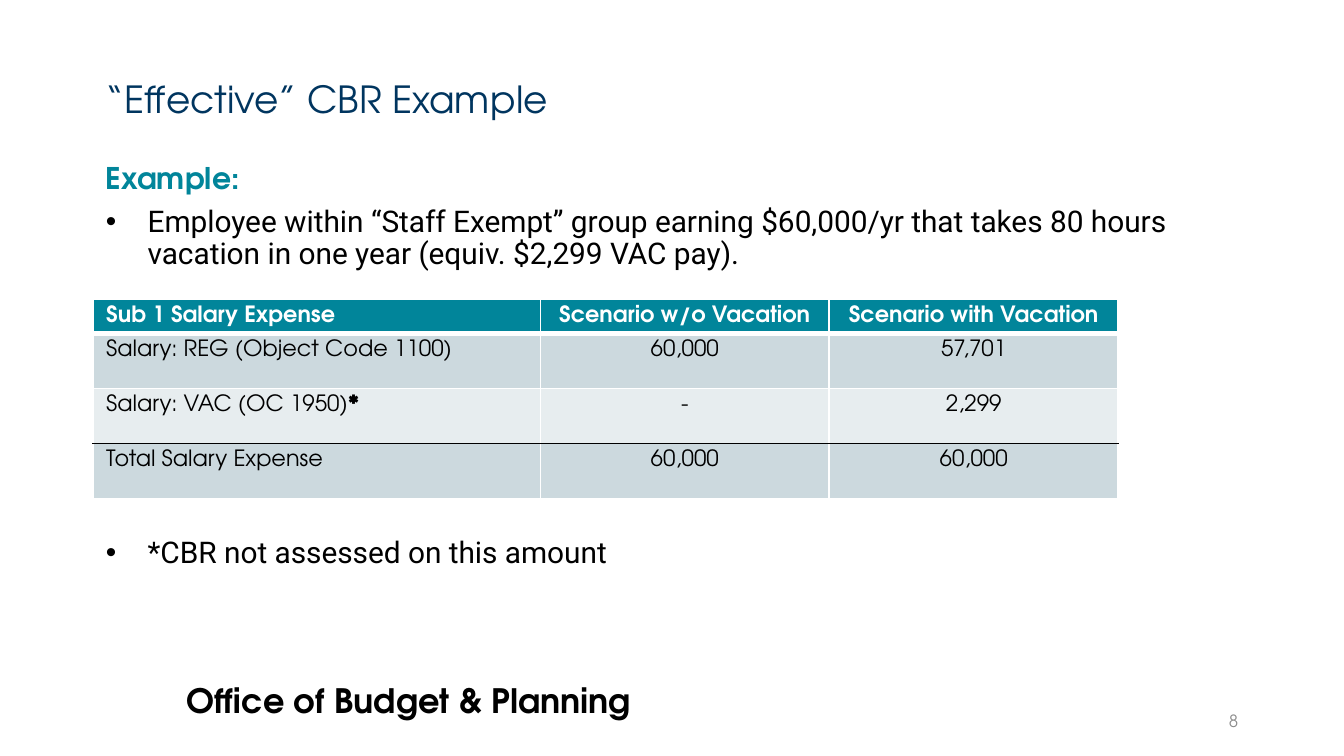
from dataclasses import dataclass

import pptx
import pptx.dml.color
import pptx.enum.text
import pptx.oxml
import pptx.oxml.ns
import pptx.util

Inches = pptx.util.Inches
Pt = pptx.util.Pt
ALIGN = pptx.enum.text.PP_ALIGN
ANCHOR = pptx.enum.text.MSO_ANCHOR


@dataclass(frozen=True)
class Theme:
    heading_font: str = "TeX Gyre Adventor"
    body_font: str = "Roboto"
    navy: str = "00355F"
    teal: str = "01859A"
    black: str = "000000"
    white: str = "FFFFFF"
    gray: str = "8C8C8C"
    band_dark: str = "CCD9DE"
    band_light: str = "E7EDEF"
    title_size: int = 20
    footer_size: int = 18
    body_size: int = 16
    table_size: int = 12
    number_size: int = 9


class SlideBuilder:
    def __init__(self, slide, theme):
        self.slide = slide
        self.theme = theme

    def add_run(self, paragraph, text, size, color, font=None, bold=False):
        run = paragraph.add_run()
        run.text = text
        run.font.name = font or self.theme.heading_font
        run.font.size = Pt(size)
        run.font.bold = bold
        run.font.color.rgb = pptx.dml.color.RGBColor.from_string(color)

    def add_text_box(self, left, top, width, height, anchor=ANCHOR.TOP):
        shape = self.slide.shapes.add_textbox(
            Inches(left), Inches(top), Inches(width), Inches(height))
        shape.text_frame.word_wrap = True
        shape.text_frame.vertical_anchor = anchor
        return shape.text_frame

    def add_bullet(self, frame, text, space_before):
        paragraph = frame.add_paragraph()
        properties = paragraph._p.get_or_add_pPr()
        properties.set("marL", str(Inches(0.31)))
        properties.set("indent", str(-Inches(0.31)))
        namespace = pptx.oxml.ns.nsdecls("a")
        properties.append(pptx.oxml.parse_xml(f'<a:buFont {namespace} typeface="Arial"/>'))
        properties.append(pptx.oxml.parse_xml(f'<a:buChar {namespace} char="•"/>'))
        paragraph.line_spacing = 0.9
        paragraph.space_before = Pt(space_before)
        self.add_run(paragraph, text, self.theme.body_size, self.theme.black,
                     self.theme.body_font)

    def set_borders(self, cell, top, bottom):
        properties = cell._tc.get_or_add_tcPr()
        side = (self.theme.white, 1)
        borders = {"lnL": side, "lnR": side, "lnT": top, "lnB": bottom}
        for index, (tag, (color, width)) in enumerate(borders.items()):
            properties.insert(index, pptx.oxml.parse_xml(
                f'<a:{tag} {pptx.oxml.ns.nsdecls("a")} w="{Pt(width)}">'
                f'<a:solidFill><a:srgbClr val="{color}"/></a:solidFill></a:{tag}>'))

    def add_table(self, left, top, widths, heights, rows):
        theme = self.theme
        frame = self.slide.shapes.add_table(
            len(rows), len(widths), Inches(left), Inches(top),
            Inches(sum(widths)), Inches(sum(heights)))
        table = frame.table
        for column, width in zip(table.columns, widths):
            column.width = Inches(width)
        for row, height in zip(table.rows, heights):
            row.height = Inches(height)

        # Rules between rows: thick under the header, black above the total
        rules = [(theme.white, 1)] * (len(rows) + 1)
        rules[1] = (theme.white, 3)
        rules[-2] = (theme.black, 1)
        for row_index, values in enumerate(rows):
            header = row_index == 0
            band = theme.band_dark if row_index % 2 else theme.band_light
            for column_index, text in enumerate(values):
                cell = table.cell(row_index, column_index)
                cell.margin_top = Inches(0.05)
                cell.margin_bottom = 0
                cell.fill.solid()
                cell.fill.fore_color.rgb = pptx.dml.color.RGBColor.from_string(
                    theme.teal if header else band)
                self.set_borders(cell, rules[row_index], rules[row_index + 1])
                paragraph = cell.text_frame.paragraphs[0]
                paragraph.alignment = ALIGN.CENTER if column_index else ALIGN.LEFT
                color = theme.white if header else theme.black
                label, star, _ = text.partition("*")
                self.add_run(paragraph, label, theme.table_size, color, bold=header)
                if star:
                    self.add_run(paragraph, star, theme.table_size, color, bold=True)


def main():
    presentation = pptx.Presentation()
    # Widescreen, 16:9
    presentation.slide_width = Inches(10)
    presentation.slide_height = Inches(10) * 9 // 16
    theme = Theme()
    slide = presentation.slides.add_slide(presentation.slide_layouts[6])
    builder = SlideBuilder(slide, theme)

    # Footer
    footer = builder.add_text_box(1.29, 5.01, 4.35, 0.4)
    builder.add_run(footer.paragraphs[0], "Office of Budget & Planning",
                    theme.footer_size, theme.black, bold=True)

    # Title
    title = builder.add_text_box(0.69, 0.5, 6.47, 0.51, ANCHOR.MIDDLE)
    title.paragraphs[0].line_spacing = 0.9
    builder.add_run(title.paragraphs[0], "“Effective” CBR Example",
                    theme.title_size, theme.navy)

    # Body, with room for the table between the two bullets
    body = builder.add_text_box(0.69, 1.17, 8.62, 3.67)
    body.paragraphs[0].line_spacing = 0.9
    builder.add_run(body.paragraphs[0], "Example:", theme.body_size, theme.teal, bold=True)
    builder.add_bullet(
        body, "Employee within “Staff Exempt” group earning $60,000/yr that takes "
        "80 hours vacation in one year (equiv. $2,299 VAC pay).", 5.6)
    builder.add_bullet(body, "*CBR not assessed on this amount", 143)

    # Slide number
    number = builder.add_text_box(7.06, 5.21, 2.25, 0.3, ANCHOR.MIDDLE)
    number.paragraphs[0].alignment = ALIGN.RIGHT
    builder.add_run(number.paragraphs[0], "8", theme.number_size, theme.gray)

    # Salary table
    builder.add_table(0.69, 2.23, [3.33, 2.15, 2.15], [0.25, 0.41, 0.41, 0.41], [
        ("Sub 1 Salary Expense", "Scenario w/o Vacation", "Scenario with Vacation"),
        ("Salary: REG (Object Code 1100)", "60,000", "57,701"),
        ("Salary: VAC (OC 1950)*", "-", "2,299"),
        ("Total Salary Expense", "60,000", "60,000"),
    ])

    presentation.save("out.pptx")


if __name__ == "__main__":
    main()
